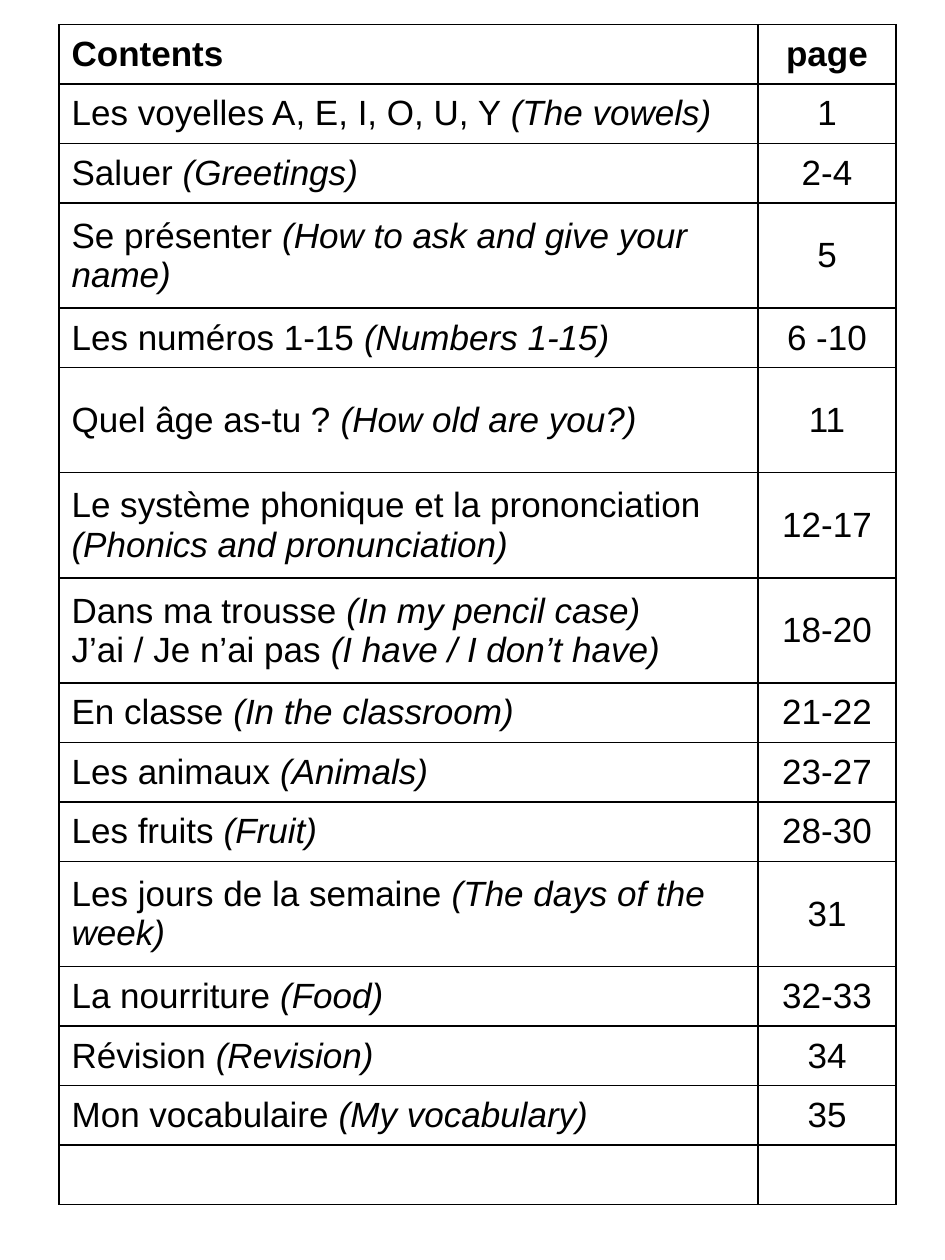
from lxml import etree
from pptx import Presentation
from pptx.dml.color import RGBColor
from pptx.enum.text import MSO_ANCHOR, PP_ALIGN
from pptx.oxml.ns import qn
from pptx.util import Pt

BLACK = RGBColor(0, 0, 0)
LEFT, CENTER = PP_ALIGN.LEFT, PP_ALIGN.CENTER
MIDDLE = MSO_ANCHOR.MIDDLE

SHORT, TALL = 34, 60.1
HEAD = ("Contents", "page")
# Row height, lines of (French, English), pages
TOPICS = [
    (SHORT, [("Les voyelles A, E, I, O, U, Y ", "(The vowels)")], "1"),
    (SHORT, [("Saluer ", "(Greetings)")], "2-4"),
    (TALL, [("Se présenter ", "(How to ask and give your name)")], "5"),
    (SHORT, [("Les numéros 1-15 ", "(Numbers 1-15)")], "6 -10"),
    (TALL, [("Quel âge as-tu ? ", "(How old are you?)")], "11"),
    (TALL, [("Le système phonique et la prononciation ",
             "(Phonics and pronunciation)")], "12-17"),
    (TALL, [("Dans ma trousse ", "(In my pencil case) "),
            ("J’ai / Je n’ai pas ", "(I have / I don’t have)")], "18-20"),
    (SHORT, [("En classe ", "(In the classroom)")], "21-22"),
    (SHORT, [("Les animaux ", "(Animals)")], "23-27"),
    (SHORT, [("Les fruits ", "(Fruit)")], "28-30"),
    (TALL, [("Les jours de la semaine ", "(The days of the week)")], "31"),
    (SHORT, [("La nourriture ", "(Food)")], "32-33"),
    (SHORT, [("Révision ", "(Revision)")], "34"),
    (SHORT, [("Mon vocabulaire ", "(My vocabulary)")], "35"),
]
X, Y = 33.7, 14
WIDTHS = (399.5, 78.8)
HEIGHTS = [SHORT] + [topic[0] for topic in TOPICS] + [SHORT]


def write(para, text, size=20, bold=False, italic=False, align=LEFT):
    para.alignment = align
    run = para.add_run()
    run.text = text
    font = run.font
    font.name, font.size = "Arial", Pt(size)
    font.bold, font.italic = bold, italic
    font.color.rgb = BLACK


def outline(cell, width=1):
    props = cell._tc.get_or_add_tcPr()
    for side in ("a:lnL", "a:lnR", "a:lnT", "a:lnB"):
        line = etree.SubElement(props, qn(side), w=str(Pt(width)))
        fill = etree.SubElement(line, qn("a:solidFill"))
        etree.SubElement(fill, qn("a:srgbClr"), val=str(BLACK))


def main():
    deck = Presentation()
    deck.slide_width, deck.slide_height = Pt(540), Pt(720)
    slide = deck.slides.add_slide(deck.slide_layouts[6])
    table = slide.shapes.add_table(
        len(HEIGHTS), len(WIDTHS), Pt(X), Pt(Y),
        Pt(sum(WIDTHS)), Pt(sum(HEIGHTS))).table
    table.first_row = table.horz_banding = False
    for col, width in zip(table.columns, WIDTHS):
        col.width = Pt(width)
    for row, height in zip(table.rows, HEIGHTS):
        row.height = Pt(height)
    for cell in table.iter_cells():
        outline(cell)
        cell.fill.background()
        cell.vertical_anchor = MIDDLE

    def first(row, col):
        return table.cell(row, col).text_frame.paragraphs[0]

    for col, (text, align) in enumerate(zip(HEAD, (LEFT, CENTER))):
        write(first(0, col), text, bold=True, align=align)
    for row, (_, lines, pages) in enumerate(TOPICS, 1):
        para = first(row, 0)
        for num, (french, english) in enumerate(lines):
            if num:
                para.add_line_break()
            write(para, french)
            write(para, english, italic=True)
        write(first(row, 1), pages, align=CENTER)
    deck.save("out.pptx")


if __name__ == "__main__":
    main()
